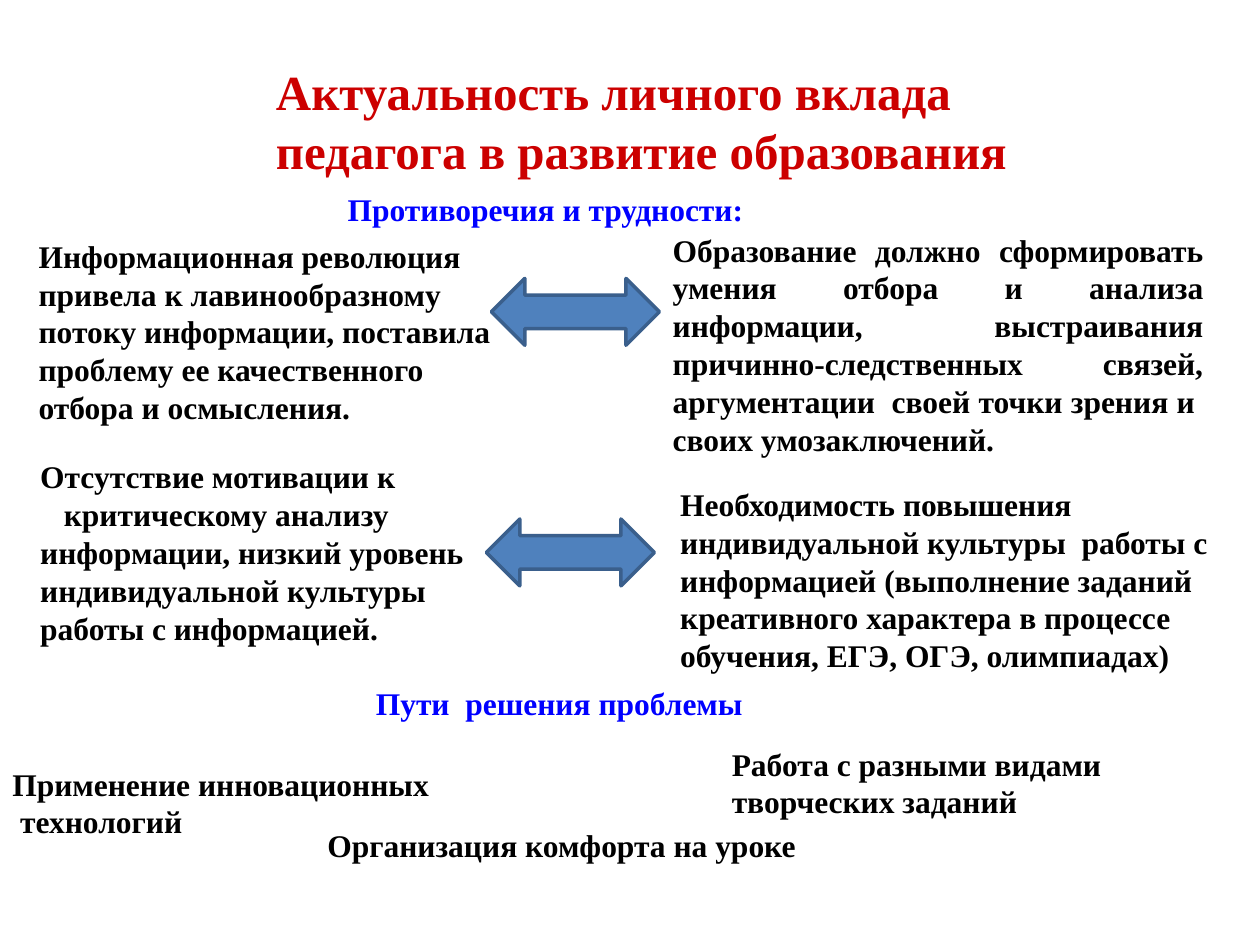
from dataclasses import dataclass

from pptx import Presentation
from pptx.dml.color import RGBColor
from pptx.enum.shapes import MSO_SHAPE
from pptx.enum.text import MSO_ANCHOR, MSO_AUTO_SIZE, PP_ALIGN
from pptx.slide import Slide
from pptx.util import Pt


def color(value):
    """Turn a hex string into a colour."""
    return RGBColor.from_string(value)


@dataclass
class SlideBuilder:
    """Hold the style and the current slide, and add each kind of element."""
    slide: Slide
    font: str = "Times New Roman"
    title_color: str = "CC0000"
    heading_color: str = "0000FF"
    body_color: str = "000000"
    arrow_fill: str = "4F81BD"
    arrow_line: str = "3A5F8C"

    def fill_text(self, frame, paragraphs, size, hue, align, wrap, spacing=1.0, indent=0):
        """Fill a text frame with bold paragraphs, indenting those after the first."""
        frame.word_wrap = wrap
        frame.auto_size = MSO_AUTO_SIZE.SHAPE_TO_FIT_TEXT
        frame.vertical_anchor = MSO_ANCHOR.TOP
        for number, wording in enumerate(paragraphs):
            paragraph = frame.add_paragraph() if number else frame.paragraphs[0]
            paragraph.alignment = align
            paragraph.line_spacing = spacing
            if number and indent:
                paragraph._p.get_or_add_pPr().set("indent", str(Pt(indent)))
            run = paragraph.add_run()
            run.text = wording
            run.font.name = self.font
            run.font.size = Pt(size)
            run.font.bold = True
            run.font.color.rgb = color(hue)

    def title(self, wording, left, top, width, height):
        """Place and format the title placeholder."""
        title = self.slide.shapes.title
        title.left, title.top = Pt(left), Pt(top)
        title.width, title.height = Pt(width), Pt(height)
        self.fill_text(title.text_frame, [wording], 28, self.title_color, PP_ALIGN.LEFT, True)

    def box(self, left, top, width, height):
        """Add a text box and return its frame."""
        return self.slide.shapes.add_textbox(Pt(left), Pt(top), Pt(width), Pt(height)).text_frame

    def heading(self, wording, left, top, width):
        """Add a centred section heading."""
        self.fill_text(self.box(left, top, width, 26.6), [wording], 18, self.heading_color,
                       PP_ALIGN.CENTER, False, 0.9)

    def body(self, paragraphs, left, top, width, height, align=PP_ALIGN.LEFT, wrap=True, indent=0):
        """Add a block of body text."""
        self.fill_text(self.box(left, top, width, height), paragraphs, 18, self.body_color,
                       align, wrap, indent=indent)

    def arrow(self, left, top):
        """Add a double-headed block arrow."""
        arrow = self.slide.shapes.add_shape(
            MSO_SHAPE.LEFT_RIGHT_ARROW, Pt(left), Pt(top), Pt(96), Pt(38.2))
        arrow.shadow.inherit = False
        arrow.fill.solid()
        arrow.fill.fore_color.rgb = color(self.arrow_fill)
        arrow.line.color.rgb = color(self.arrow_line)
        arrow.line.width = Pt(2)


def main():
    """Build and save the slide."""
    deck = Presentation()
    deck.slide_width, deck.slide_height = Pt(720), Pt(540)
    page = SlideBuilder(deck.slides.add_slide(deck.slide_layouts.get_by_name("Title Only")))

    page.title("Актуальность личного вклада педагога в развитие образования",
               150.5, 31.7, 450.7, 74.9)

    page.heading("Противоречия и трудности:", 190, 107.3, 243.4)
    page.body(["Информационная революция привела к лавинообразному потоку информации, "
               "поставила проблему ее качественного отбора и осмысления."],
              15, 131.8, 280.8, 116.6)
    page.body(["Образование должно сформировать умения отбора и анализа информации, "
               "выстраивания причинно-следственных связей, аргументации  своей точки зрения и  "
               "своих умозаключений."],
              377.3, 128.2, 317.5, 138.2, align=PP_ALIGN.JUSTIFY)
    page.body(["Отсутствие мотивации к",
               "критическому анализу информации, низкий уровень индивидуальной культуры "
               "работы с информацией."],
              15.9, 257.8, 264.2, 116.6, indent=13.5)
    page.body(["Необходимость повышения индивидуальной культуры  работы с информацией "
               "(выполнение заданий креативного характера в процессе обучения, ЕГЭ, ОГЭ, "
               "олимпиадах)"],
              381.6, 273.6, 317.5, 116.6)

    page.heading("Пути  решения проблемы", 206.6, 389.5, 226.1)
    page.body(["Применение инновационных", "технологий"],
              0, 433.4, 254.9, 51.1, wrap=False, indent=4.5)
    page.body(["Организация комфорта на уроке"], 180, 468.7, 360, 28.8)
    page.body(["Работа с разными видами", "творческих заданий"],
              411.1, 421.9, 232.6, 51.1, wrap=False)

    for left, top in ((277.9, 296.6), (280.8, 159.1)):
        page.arrow(left, top)

    deck.save("out.pptx")


if __name__ == "__main__":
    main()
